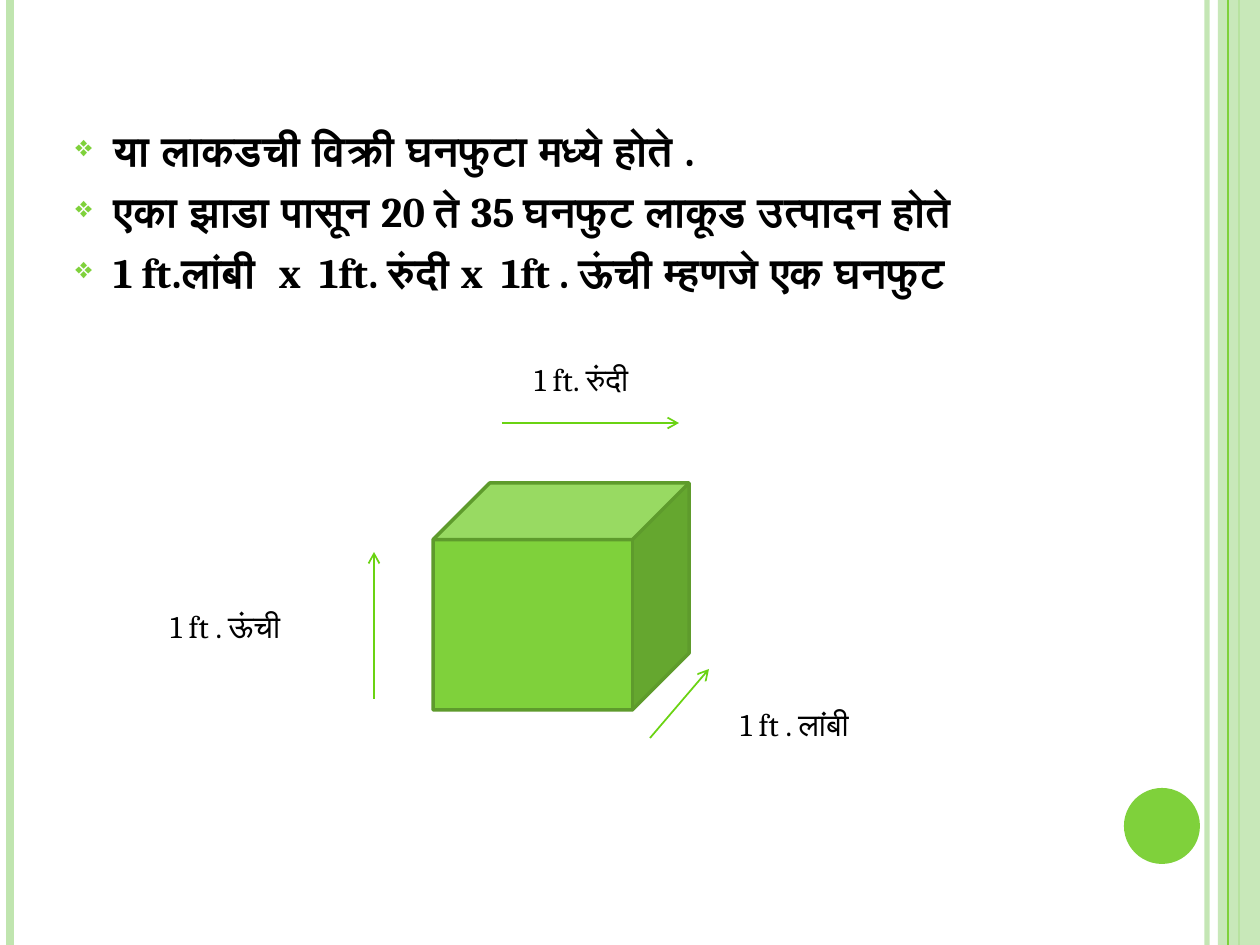
import pptx
import pptx.util
from lxml import etree
from pptx.dml.color import RGBColor
from pptx.enum.shapes import MSO_CONNECTOR, MSO_SHAPE
from pptx.enum.text import MSO_AUTO_SIZE
from pptx.oxml import parse_xml
from pptx.oxml.ns import nsdecls, qn

PX = 914400 / 126
WIDTH, HEIGHT = 1260, 945
GREEN = RGBColor(0x7F, 0xD1, 0x3B)
PALE_GREEN = RGBColor(0xC0, 0xE5, 0xAF)
DARK_GREEN = RGBColor(0x5E, 0x9B, 0x2C)
ARROW_GREEN = RGBColor(0x6A, 0xD3, 0x12)
BLACK = RGBColor(0, 0, 0)
FONT = "Cambria"

deck = pptx.Presentation()
deck.slide_width = round(WIDTH * PX)
deck.slide_height = round(HEIGHT * PX)
page = deck.slides.add_slide(deck.slide_layouts[6])


def add_line(x1, y1, x2, y2, color, width):
    ends = [round(value * PX) for value in (x1, y1, x2, y2)]
    line = page.shapes.add_connector(MSO_CONNECTOR.STRAIGHT, *ends)
    line.line.color.rgb = color
    line.line.width = pptx.util.Pt(width)
    etree.SubElement(line._element.spPr, qn("a:effectLst"))
    return line


def add_solid(kind, left, top, width, height, color):
    place = [round(value * PX) for value in (left, top, width, height)]
    shape = page.shapes.add_shape(kind, *place)
    shape.shadow.inherit = False
    shape.fill.solid()
    shape.fill.fore_color.rgb = color
    shape.line.fill.background()
    return shape


# Edge stripes, with the translucent band over the first three
stripes = [add_line(x, 0, x, HEIGHT, color, width) for x, color, width in (
    (1207, PALE_GREEN, 3), (10, PALE_GREEN, 4.5), (1239, GREEN, 1.5))]
band = add_solid(MSO_SHAPE.RECTANGLE, 1218, 0, 42, HEIGHT, PALE_GREEN)
add_line(1228, 0, 1228, HEIGHT, GREEN, 0.75)
for part, alpha in ((stripes[0], 93000), (band, 87000)):
    color = next(part._element.spPr.iter(qn("a:srgbClr")))
    etree.SubElement(color, qn("a:alpha"), val=str(alpha))

# Corner disc
add_solid(MSO_SHAPE.OVAL, 1124, 788, 76, 76, GREEN)

# Bulleted facts
facts = [
    "या लाकडची विक्री घनफुटा मध्ये होते .",
    "एका झाडा पासून 20 ते 35 घनफुट लाकूड उत्पादन होते",
    "1 ft.लांबी  x  1ft. रुंदी x  1ft . ऊंची म्हणजे एक घनफुट",
]
box = page.shapes.add_textbox(*[round(value * PX) for value in (63, 118, 1050, 774)])
box.text_frame.word_wrap = True
for index, fact in enumerate(facts):
    para = box.text_frame.paragraphs[0] if index == 0 else box.text_frame.add_paragraph()
    para.text = fact
    properties = para._p.get_or_add_pPr()
    properties.set("marL", str(round(38 * PX)))
    properties.set("indent", str(round(-38 * PX)))
    for bullet in (
        f'<a:buClr {nsdecls("a")}><a:srgbClr val="{GREEN}"/></a:buClr>',
        f'<a:buSzPct {nsdecls("a")} val="70000"/>',
        f'<a:buChar {nsdecls("a")} char="❖"/>',
    ):
        properties.append(parse_xml(bullet))
    para.space_before = pptx.util.Pt(6 if index else 0)
    para.font.name = FONT
    para.font.size = pptx.util.Pt(24)
    para.font.bold = True
    para.font.color.rgb = BLACK

# Cube of one cubic foot
cube = add_solid(MSO_SHAPE.CUBE, 433, 483, 256, 227, GREEN)
cube.line.color.rgb = DARK_GREEN
cube.line.width = pptx.util.Pt(2)

# Dimension arrows: width, height, length
for ends in ((502, 423, 679, 423), (374, 699, 374, 552), (650, 738, 709, 669)):
    arrow = add_line(*ends, ARROW_GREEN, 1)
    etree.SubElement(arrow.line._get_or_add_ln(), qn("a:tailEnd"), type="arrow")

# Dimension labels
for left, top, width, label in (
    (522, 354, 161, "1 ft. रुंदी"),
    (158, 601, 179, "1 ft . ऊंची"),
    (728, 699, 184, "1 ft . लांबी"),
):
    box = page.shapes.add_textbox(*[round(value * PX) for value in (left, top, width, 50)])
    box.text_frame.word_wrap = False
    box.text_frame.auto_size = MSO_AUTO_SIZE.SHAPE_TO_FIT_TEXT
    para = box.text_frame.paragraphs[0]
    para.text = label
    para.font.name = FONT
    para.font.size = pptx.util.Pt(18)
    para.font.color.rgb = BLACK

deck.save("out.pptx")
